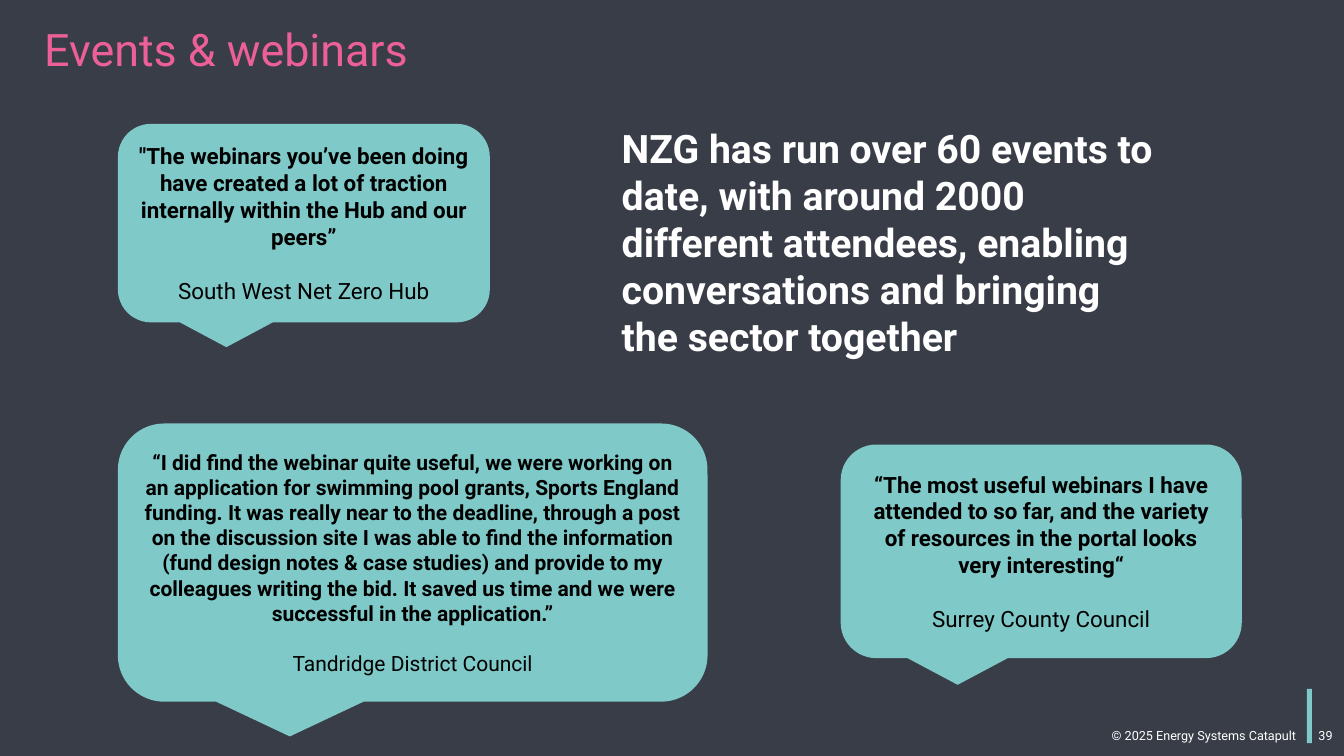
from pptx import Presentation
from pptx.dml.color import RGBColor
from pptx.enum.shapes import MSO_SHAPE as Shape
from pptx.enum.text import MSO_ANCHOR as Anchor, PP_ALIGN as Align
from pptx.util import Pt

COLORS = {
    "background": "393D48",
    "teal": "7FC9C9",
    "pink": "EC6097",
    "white": "FFFFFF",
    "black": "000000",
}

QUOTES = [
    (600.5, 317.5, 286.5, 152.6, 16,
     "“The most useful webinars I have attended to so far, and the variety "
     "of resources in the portal looks very interesting“",
     "Surrey County Council"),
    (84.2, 88.5, 265.7, 141.8, 16,
     "\"The webinars you’ve been doing have created a lot of traction "
     "internally within the Hub and our peers”",
     "South West Net Zero Hub"),
    (84.2, 302.5, 421.2, 198.7, 15,
     "“I did find the webinar quite useful, we were working on an application "
     "for swimming pool grants, Sports England funding. It was really near to "
     "the deadline, through a post on the discussion site I was able to find "
     "the information (fund design notes & case studies) and provide to my "
     "colleagues writing the bid. It saved us time and we were successful in "
     "the application.”",
     "Tandridge District Council"),
]


class SlideBuilder:
    font_name = "Roboto"
    line_height = 1.2

    def __init__(self, slide):
        self.slide = slide
        self.paint(slide.background.fill, "background")

    def paint(self, fill, color):
        fill.solid()
        fill.fore_color.rgb = RGBColor.from_string(COLORS[color])

    def set_text(self, paragraph, text, size, color, bold=False, align=Align.LEFT):
        paragraph.text = text
        paragraph.alignment = align
        font = paragraph.font
        font.name = self.font_name
        font.size = Pt(size)
        font.bold = bold
        font.color.rgb = RGBColor.from_string(COLORS[color])

    def text(self, left, top, width, height, text, size, color="white",
             bold=False, align=Align.LEFT, anchor=Anchor.TOP, wrap=True):
        box = self.slide.shapes.add_textbox(Pt(left), Pt(top), Pt(width), Pt(height))
        frame = box.text_frame
        frame.word_wrap = wrap
        frame.vertical_anchor = anchor
        paragraph = frame.paragraphs[0]
        self.set_text(paragraph, text, size, color, bold, align)
        return paragraph

    def shape(self, kind, left, top, width, height, color):
        shape = self.slide.shapes.add_shape(
            kind, Pt(left), Pt(top), Pt(width), Pt(height))
        self.paint(shape.fill, color)
        shape.line.fill.background()
        shape.shadow.inherit = False
        return shape

    def quote(self, left, top, width, height, size, words, author):
        bubble = self.shape(Shape.ROUNDED_RECTANGULAR_CALLOUT,
                            left, top, width, height, "teal")
        frame = bubble.text_frame
        frame.word_wrap = True
        frame.vertical_anchor = Anchor.MIDDLE
        self.set_text(frame.paragraphs[0], words, size, "black", True, Align.CENTER)
        source = frame.add_paragraph()
        self.set_text(source, author, size, "black", align=Align.CENTER)
        source.space_before = Pt(size * self.line_height)


def main():
    presentation = Presentation()
    presentation.slide_width = Pt(960)
    presentation.slide_height = Pt(540)
    builder = SlideBuilder(presentation.slides.add_slide(presentation.slide_layouts[6]))

    builder.text(787, 516.2, 146.2, 18, "© 2025 Energy Systems Catapult", 9, wrap=False)
    builder.shape(Shape.RECTANGLE, 933.5, 492, 3.6, 38.9, "teal")
    builder.text(894.2, 511.2, 64.8, 28.8, "39", 9,
                 align=Align.RIGHT, anchor=Anchor.MIDDLE)
    title = builder.text(24.5, 16.6, 704.2, 42.5, "Events & webinars", 32, "pink")
    title.line_spacing = 0.9
    builder.text(437, 85, 394.6, 198.7,
                 "NZG has run over 60 events to date, with around 2000 different "
                 "attendees, enabling conversations and bringing the sector together",
                 28, bold=True)
    for quote in QUOTES:
        builder.quote(*quote)

    presentation.save("out.pptx")


if __name__ == "__main__":
    main()
